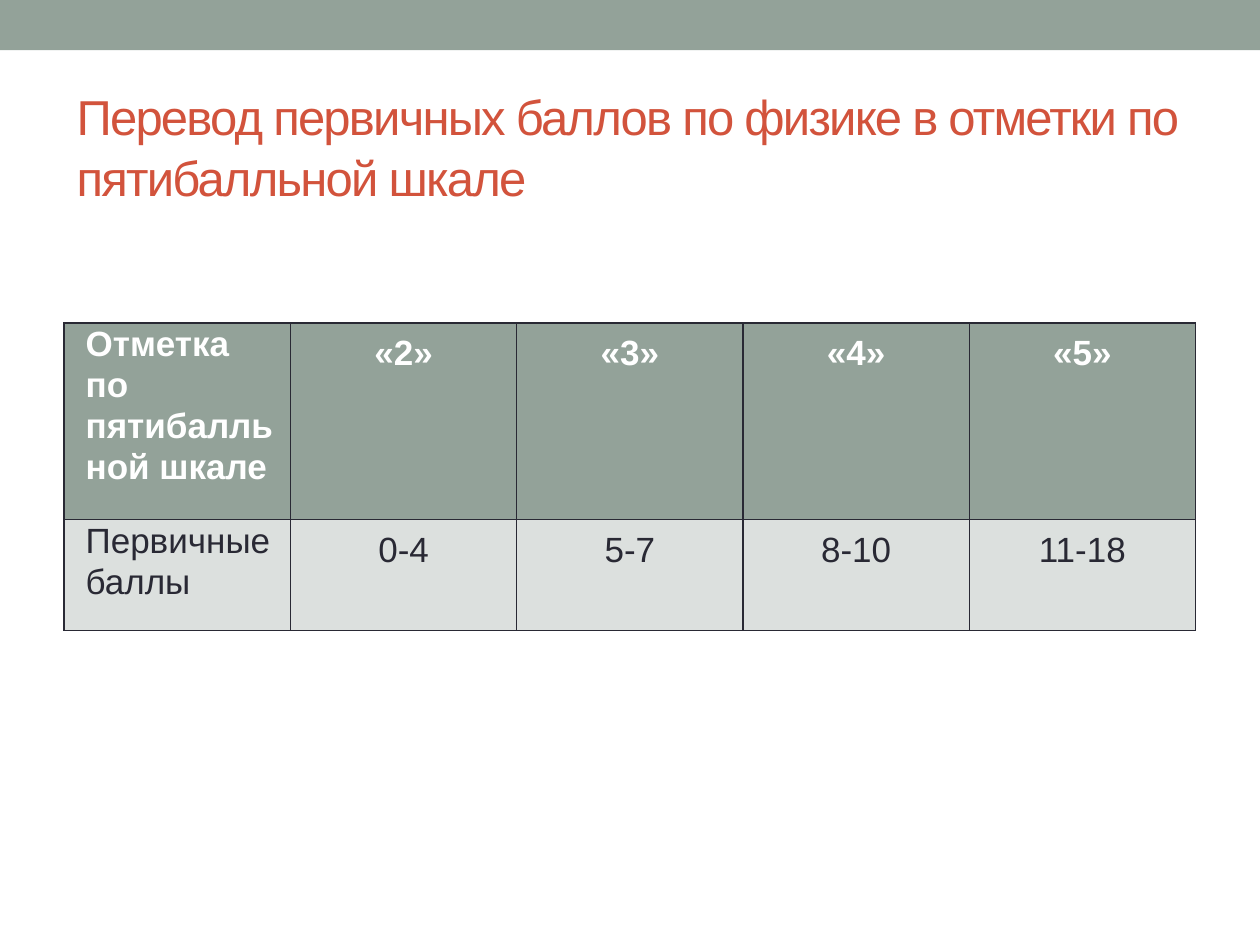
from lxml import etree
from pptx import Presentation
from pptx.dml.color import RGBColor
from pptx.enum.shapes import MSO_SHAPE
from pptx.enum.text import MSO_ANCHOR, PP_ALIGN
from pptx.oxml.ns import qn
from pptx.util import Inches, Pt

RECT = MSO_SHAPE.RECTANGLE
MIDDLE = MSO_ANCHOR.MIDDLE
LEFT, CENTER = PP_ALIGN.LEFT, PP_ALIGN.CENTER

WIDE, HIGH = Inches(10), Inches(7.5)
FONT = "Arial"
COLORS = {"sage": "93A299", "pale": "DCE0DE", "ink": "292934",
          "rust": "D2533C", "white": "FFFFFF"}
TITLE = "Перевод первичных баллов по физике в отметки по пятибалльной шкале"
ROWS = [
    ["Отметка по пятибалльной шкале", "«2»", "«3»", "«4»", "«5»"],
    ["Первичные баллы", "0-4", "5-7", "8-10", "11-18"],
]
SHARES = [0.64, 0.36]
STYLES = [
    {"fill": "sage", "color": "white", "bold": True},
    {"fill": "pale", "color": "ink", "bold": False},
]
LABEL = {
    "cell": {"margin_left": Inches(0.07), "margin_right": Inches(0.08),
             "margin_top": 0, "margin_bottom": 0},
    "para": {"alignment": LEFT, "line_spacing": 1.05},
    "indent": Inches(0.1),
}
VALUE = {
    "cell": {"margin_left": Inches(0.07), "margin_right": Inches(0.07),
             "margin_top": Pt(16.5), "margin_bottom": 0},
    "para": {"alignment": CENTER, "line_spacing": Pt(12), "space_after": Pt(4.5)},
    "indent": 0,
}


def share(left, top, width, height):
    """Turn shares of the slide into a box of lengths."""
    return (int(left * WIDE), int(top * HIGH), int(width * WIDE), int(height * HIGH))


def apply(item, values):
    for name, value in values.items():
        setattr(item, name, value)


def paint(item, color):
    item.fill.solid()
    item.fill.fore_color.rgb = RGBColor.from_string(COLORS[color])


def write(para, text, size, color, bold=False):
    run = para.add_run()
    run.text = text
    apply(run.font, {"name": FONT, "size": Pt(size), "bold": bold})
    run.font.color.rgb = RGBColor.from_string(COLORS[color])
    return run


def border(cell):
    """Draw a thin dark line on each side of a cell."""
    props = cell._tc.get_or_add_tcPr()
    for spot, side in enumerate(("a:lnL", "a:lnR", "a:lnT", "a:lnB")):
        line = etree.Element(qn(side), w=str(Pt(1)))
        fill = etree.SubElement(line, qn("a:solidFill"))
        etree.SubElement(fill, qn("a:srgbClr"), val=COLORS["ink"])
        props.insert(spot, line)


def add_band(slide, box):
    band = slide.shapes.add_shape(RECT, *box)
    band.shadow.inherit = False
    paint(band, "sage")
    band.line.fill.background()


def add_title(slide, box):
    frame = slide.shapes.add_textbox(*box).text_frame
    apply(frame, {"word_wrap": True, "vertical_anchor": MIDDLE})
    para = frame.paragraphs[0]
    para.line_spacing = 1.05
    run = write(para, TITLE, 28, "rust")
    run._r.get_or_add_rPr().set("spc", "-100")


def fill_cell(cell, text, style, form):
    apply(cell, form["cell"])
    paint(cell, style["fill"])
    border(cell)
    para = cell.text_frame.paragraphs[0]
    apply(para, form["para"])
    if form["indent"]:
        para._p.get_or_add_pPr().set("marL", str(form["indent"]))
    write(para, text, 20, style["color"], style["bold"])


def add_scores(slide, box):
    left, top, width, height = box
    count = len(ROWS[0])
    table = slide.shapes.add_table(len(ROWS), count, *box).table
    apply(table, {"first_row": True, "horz_banding": False})
    for col in table.columns:
        col.width = width // count
    for row, part, texts, style in zip(table.rows, SHARES, ROWS, STYLES):
        row.height = int(height * part)
        for spot, (cell, text) in enumerate(zip(row.cells, texts)):
            fill_cell(cell, text, style, VALUE if spot else LABEL)


def main():
    deck = Presentation()
    apply(deck, {"slide_width": WIDE, "slide_height": HIGH})
    slide = deck.slides.add_slide(deck.slide_layouts[6])
    add_band(slide, share(0, 0, 1, 0.053))
    add_title(slide, share(0.051, 0.08, 0.929, 0.147))
    add_scores(slide, share(0.051, 0.342, 0.898, 0.325))
    deck.save("out.pptx")


if __name__ == "__main__":
    main()
